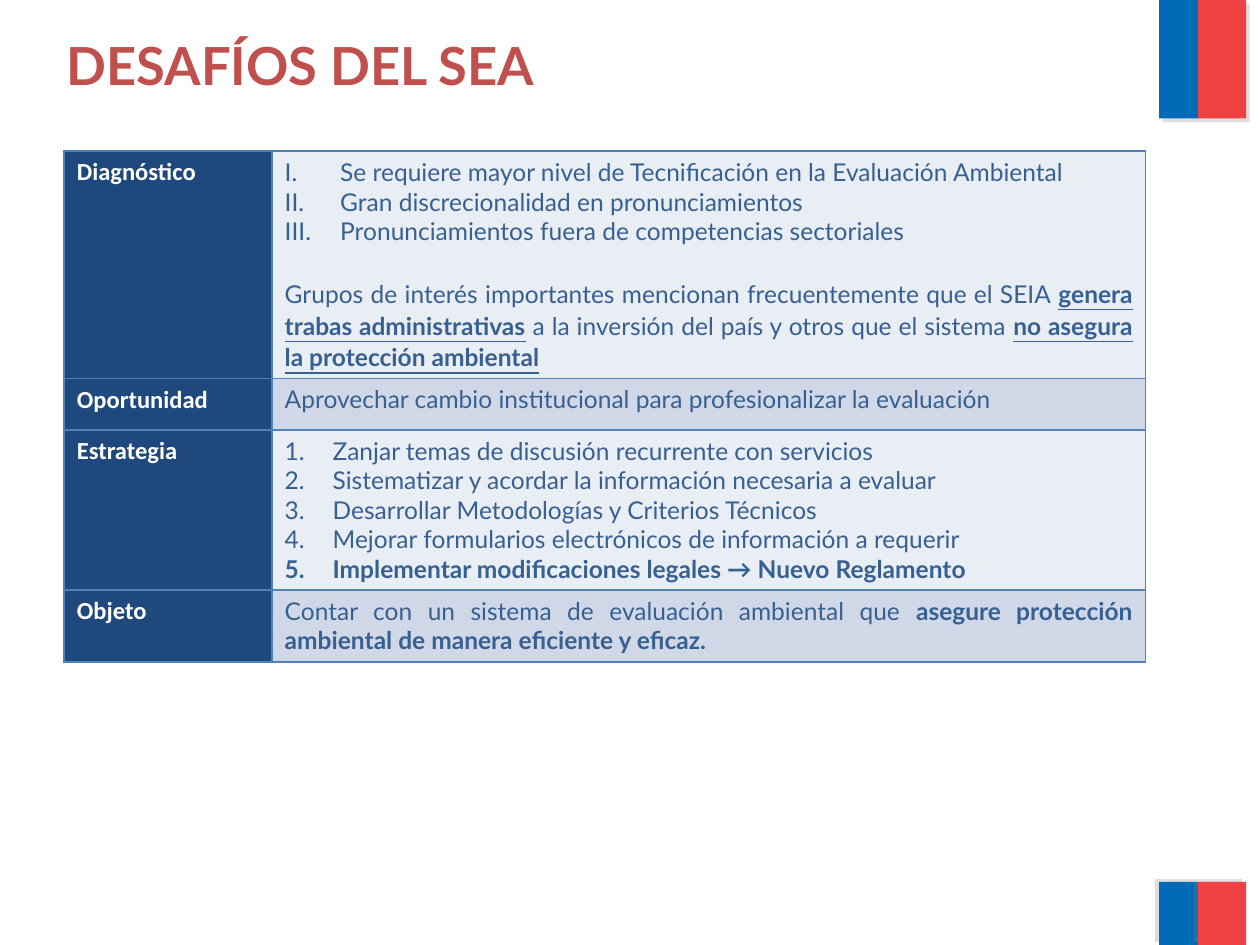
import pptx
import pptx.util
import pptx.dml.color
import pptx.enum.shapes
import pptx.enum.text
import pptx.oxml
import pptx.oxml.ns
from lxml import etree
from pptx.util import Inches, Pt

HUES = {
    "blue": "006CB7", "red": "EF4144", "shade": "808080", "title": "C0504D",
    "head": "1F497D", "pale": "E9EDF4", "mid": "D0D8E8", "edge": "4F81BD",
    "body": "376092", "white": "FFFFFF",
}
ROWS = [
    ("Diagnóstico", 1.8, [
        ("romanUcPeriod", 0.44, [("Se requiere mayor nivel de Tecnificación en la Evaluación Ambiental", "")]),
        ("romanUcPeriod", 0.44, [("Gran discrecionalidad en pronunciamientos", "")]),
        ("romanUcPeriod", 0.44, [("Pronunciamientos fuera de competencias sectoriales", "")]),
        (None, 0, [
            ("Grupos de interés importantes mencionan frecuentemente que el SEIA ", ""),
            ("genera trabas administrativas", "bu"),
            (" ", "gap"),
            ("a la inversión del país y otros que el sistema ", ""),
            ("no asegura la protección ambiental", "bu"),
        ]),
    ]),
    ("Oportunidad", 0.41, [
        (None, 0, [("Aprovechar cambio institucional para profesionalizar la evaluación", "")]),
    ]),
    ("Estrategia", 1.27, [
        ("arabicPeriod", 0.38, [("Zanjar temas de discusión recurrente con servicios", "")]),
        ("arabicPeriod", 0.38, [("Sistematizar y acordar la información necesaria a evaluar", "")]),
        ("arabicPeriod", 0.38, [("Desarrollar Metodologías y Criterios Técnicos", "")]),
        ("arabicPeriod", 0.38, [("Mejorar formularios electrónicos de información a requerir", "")]),
        ("arabicPeriod", 0.38, [("Implementar modificaciones legales → Nuevo Reglamento", "b")]),
    ]),
    ("Objeto", 0.57, [
        (None, 0, [
            ("Contar con un sistema de evaluación ambiental que ", ""),
            ("asegure protección ambiental de manera eficiente y eficaz.", "b"),
        ]),
    ]),
]


def hue(name):
    """Return the named colour."""
    return pptx.dml.color.RGBColor.from_string(HUES[name])


def style(font, face, size, color, bold=None):
    """Set the look of a font."""
    font.name, font.size, font.bold = face, Pt(size), bold
    font.color.rgb = hue(color)


def add_flag(slide, left, top, height, angle):
    """Draw a two-colour band with a shadow cast at the given angle."""
    for color, start, width in (("blue", 0, 0.31), ("red", 0.31, 0.38)):
        bar = slide.shapes.add_shape(
            pptx.enum.shapes.MSO_SHAPE.RECTANGLE,
            Inches(left + start), Inches(top), Inches(width), Inches(height))
        bar.fill.solid()
        bar.fill.fore_color.rgb = hue(color)
        bar.line.fill.background()
        bar.shadow.inherit = False
        glow = bar._element.spPr.find(pptx.oxml.ns.qn("a:effectLst"))
        glow.append(pptx.oxml.parse_xml(
            f'<a:outerShdw {pptx.oxml.ns.nsdecls("a")} blurRad="0" dist="{Pt(3)}" '
            f'dir="{angle * 60000}" rotWithShape="0"><a:srgbClr val="{HUES["shade"]}">'
            '<a:alpha val="25000"/></a:srgbClr></a:outerShdw>'))


def add_title(slide, left, top, width, height):
    """Write the heading."""
    frame = slide.shapes.add_textbox(
        Inches(left), Inches(top), Inches(width), Inches(height)).text_frame
    frame.word_wrap = True
    frame.vertical_anchor = pptx.enum.text.MSO_ANCHOR.MIDDLE
    para = frame.paragraphs[0]
    para.text = "DESAFÍOS DEL SEA"
    style(para.font, "Lato", 30, "title", True)


def paint(cell, color):
    """Fill a cell and rule its four sides."""
    cell.fill.solid()
    cell.fill.fore_color.rgb = hue(color)
    props = cell._tc.get_or_add_tcPr()
    for spot, side in enumerate("LRTB"):
        props.insert(spot, pptx.oxml.parse_xml(
            f'<a:ln{side} {pptx.oxml.ns.nsdecls("a")} w="{Pt(1)}"><a:solidFill>'
            f'<a:srgbClr val="{HUES["edge"]}"/></a:solidFill></a:ln{side}>'))


def write(para, mark, indent, runs):
    """Write one justified paragraph, numbered if it has a mark."""
    para.alignment = pptx.enum.text.PP_ALIGN.JUSTIFY
    if mark:
        props = para._p.get_or_add_pPr()
        props.set("marL", str(Inches(indent)))
        props.set("indent", str(-Inches(indent)))
        etree.SubElement(props, pptx.oxml.ns.qn("a:buAutoNum"), type=mark)
    style(para.font, "Lato", 14, "body")
    for text, kind in runs:
        run = para.add_run()
        run.text = text
        if kind == "gap":
            run.font.name, run.font.size = "Calibri", Pt(16)
        elif kind:
            run.font.bold = True
            run.font.underline = True if "u" in kind else None


def add_grid(slide, left, top, width, height):
    """Build the table of topics and their points."""
    grid = slide.shapes.add_table(
        len(ROWS), 2, Inches(left), Inches(top), Inches(width), Inches(height)).table
    grid.first_row = False
    grid.columns[0].width = Inches(1.65)
    grid.columns[1].width = Inches(width - 1.65)
    for num, (topic, tall, points) in enumerate(ROWS):
        grid.rows[num].height = Inches(tall)
        head, body = grid.cell(num, 0), grid.cell(num, 1)
        paint(head, "head")
        paint(body, "mid" if num % 2 else "pale")
        para = head.text_frame.paragraphs[0]
        para.text = topic
        style(para.font, "Calibri", 14, "white", True)
        frame = body.text_frame
        for spot, (mark, indent, runs) in enumerate(points):
            para = frame.add_paragraph() if spot else frame.paragraphs[0]
            write(para, mark, indent, runs)
            if spot and not mark:
                para.space_before = Pt(19)


def main():
    """Build and save the slide."""
    deck = pptx.Presentation()
    deck.slide_width, deck.slide_height = Inches(10), Inches(7.5)
    slide = deck.slides.add_slide(deck.slide_layouts[6])
    add_flag(slide, 9.2, 0, 0.94, 45)
    add_flag(slide, 9.2, 7, 0.5, 215)
    add_grid(slide, 0.51, 1.2, 8.58, 4.05)
    add_title(slide, 0.43, 0.13, 5.96, 0.76)
    deck.save("out.pptx")


if __name__ == "__main__":
    main()
